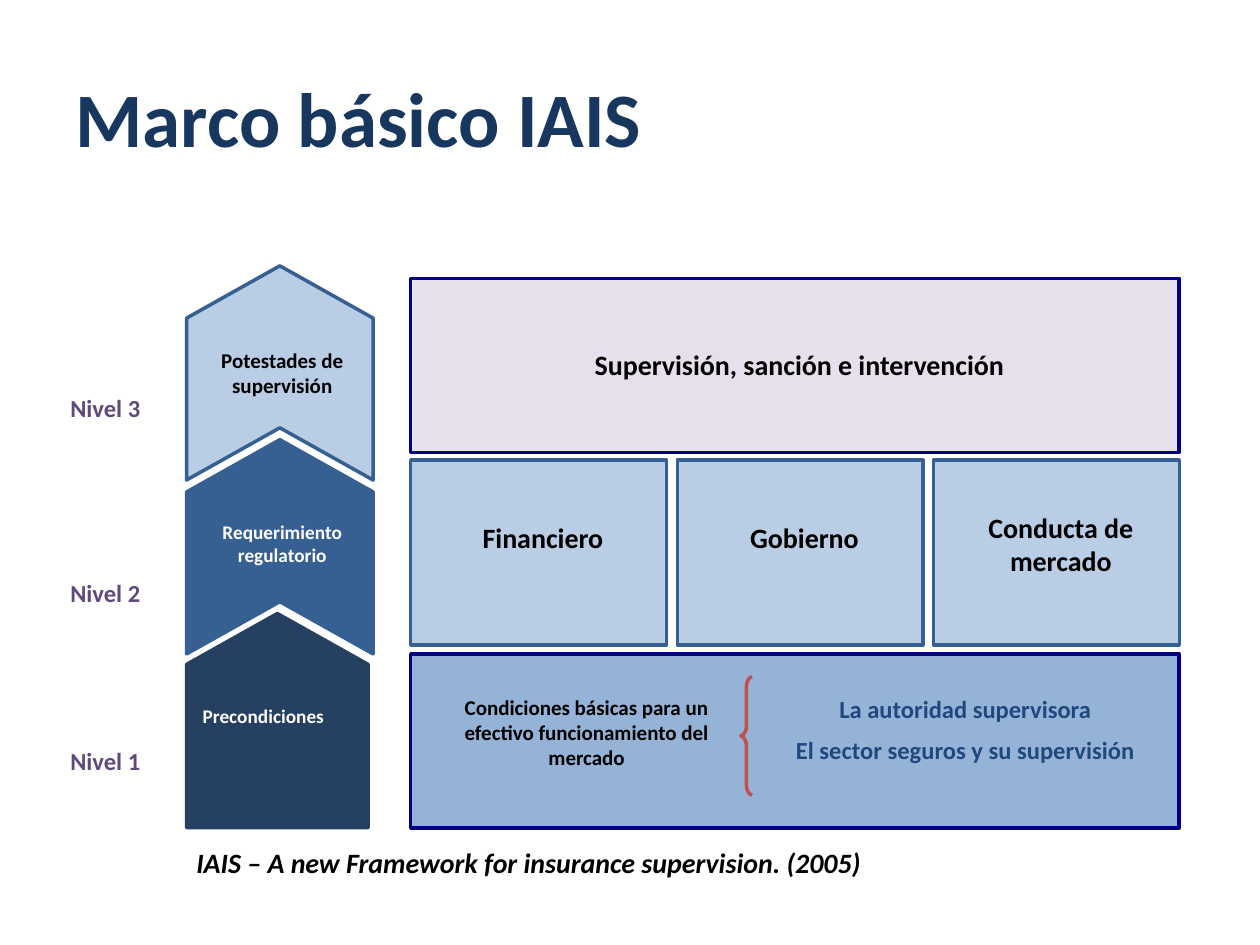
from pptx import Presentation
from pptx.dml.color import RGBColor
from pptx.enum.shapes import MSO_SHAPE
from pptx.enum.text import MSO_ANCHOR, PP_ALIGN
from pptx.util import Pt

BLACK = RGBColor(0x00, 0x00, 0x00)
WHITE = RGBColor(0xFF, 0xFF, 0xFF)
TITLE = RGBColor(0x17, 0x37, 0x5E)
DEEP = RGBColor(0x25, 0x40, 0x61)
BLUE = RGBColor(0x37, 0x60, 0x92)
PALE = RGBColor(0xB9, 0xCD, 0xE5)
SKY = RGBColor(0x95, 0xB3, 0xD7)
LILAC = RGBColor(0xE6, 0xE0, 0xEC)
NAVY = RGBColor(0x00, 0x00, 0x80)
RED = RGBColor(0xC0, 0x50, 0x4D)
INK = RGBColor(0x1F, 0x49, 0x7D)
PURPLE = RGBColor(0x60, 0x4A, 0x7B)
FONT = "Calibri"


def style(run, size, color, italic=False):
    font = run.font
    font.name, font.size = FONT, Pt(size)
    font.bold, font.italic = True, italic
    font.color.rgb = color


def shape(slide, kind, box, fill, line):
    item = slide.shapes.add_shape(kind, *map(Pt, box))
    item.shadow.inherit = False
    if fill is None:
        item.fill.background()
    else:
        item.fill.solid()
        item.fill.fore_color.rgb = fill
    item.line.color.rgb = line
    item.line.width = Pt(2)
    return item


def label(slide, box, lines, size, color, align=PP_ALIGN.CENTER, italic=False):
    frame = slide.shapes.add_textbox(*map(Pt, box)).text_frame
    frame.word_wrap = True
    for i, line in enumerate(lines):
        para = frame.paragraphs[0] if i == 0 else frame.add_paragraph()
        para.alignment = align
        if i:
            para.space_before = Pt(6.3)
        run = para.add_run()
        run.text = line
        style(run, size, color, italic)


def heading(slide, box, text):
    title = slide.shapes.title
    title.left, title.top, title.width, title.height = map(Pt, box)
    frame = title.text_frame
    frame.vertical_anchor = MSO_ANCHOR.MIDDLE
    para = frame.paragraphs[0]
    para.alignment = PP_ALIGN.LEFT
    run = para.add_run()
    run.text = text
    style(run, 44, TITLE)


def tower(slide, box):
    """Stack of upward arrows, drawn from the lowest to the highest."""
    left, top, wide, high = box
    step = 122.4
    pitch = (high - step) / 2
    steps = [
        (2, MSO_SHAPE.PENTAGON, wide - 2.8, DEEP, DEEP),
        (1, MSO_SHAPE.CHEVRON, wide, BLUE, BLUE),
        (0, MSO_SHAPE.CHEVRON, wide, PALE, BLUE),
    ]
    for row, kind, width, fill, line in steps:
        # Turned a quarter, so its length runs up the tower
        x = left + (width - step) / 2
        y = top + row * pitch + (step - width) / 2
        arrow = shape(slide, kind, (x, y, step, width), fill, line)
        arrow.rotation = 270
        arrow.adjustments[0] = 0.28

    names = [
        (5.7, 43.2, "Potestades de supervisión", 12, BLACK, PP_ALIGN.CENTER),
        (5.7, 141.8, "Requerimiento regulatorio", 11, WHITE, PP_ALIGN.CENTER),
        (2.1, 246.9, "Precondiciones", 11, WHITE, PP_ALIGN.LEFT),
    ]
    for x, y, text, size, color, align in names:
        label(slide, (left + x, top + y, 98, 36), [text], size, color, align)


def levels(slide, box):
    left, top, wide, high = box
    for level, y in ((3, 0), (2, 105.9), (1, 201.6)):
        label(slide, (left, top + y, wide, 23), [f"Nivel {level}"], 14, PURPLE,
              PP_ALIGN.LEFT)


def powers(slide, box):
    left, top, wide, high = box
    shape(slide, MSO_SHAPE.RECTANGLE, box, LILAC, NAVY)
    label(slide, (left + 85, top + 36, 274.5, 43),
          ["Supervisión, sanción e intervención"], 16, BLACK)


def rules(slide, box):
    left, top, wide, high = box
    gap = 6.1
    cells = [("Financiero", 146.2, 31), ("Gobierno", 140.4, 31),
             ("Conducta de mercado", 140.4, 25.2)]
    for text, width, y in cells:
        shape(slide, MSO_SHAPE.RECTANGLE, (left, top, width, high), PALE, BLUE)
        label(slide, (left + 5.7, top + y, width - 6.4, 43), [text], 16, BLACK)
        left += width + gap


def basis(slide, box):
    left, top, wide, high = box
    shape(slide, MSO_SHAPE.RECTANGLE, box, SKY, NAVY)
    label(slide, (left + 18, top + 19.4, 165, 62),
          ["Condiciones básicas para un efectivo funcionamiento del mercado"],
          12, BLACK)
    brace = shape(slide, MSO_SHAPE.LEFT_BRACE,
                  (left + 188.6, top + 13, 6.5, 67.7), None, RED)
    brace.adjustments[0] = 0.9
    label(slide, (left + 201, top + 19.4, 232, 66),
          ["La autoridad supervisora", "El sector seguros y su supervisión"],
          14, INK)


def main():
    deck = Presentation()
    deck.slide_width, deck.slide_height = Pt(720), Pt(540)
    slide = deck.slides.add_slide(deck.slide_layouts[5])
    heading(slide, (36, 21.6, 648, 90), "Marco básico IAIS")
    tower(slide, (106.6, 151.9, 106.6, 321.1))
    left, wide = 234.7, 439.2
    powers(slide, (left, 159.1, wide, 99.4))
    rules(slide, (left, 262.8, wide, 105.8))
    basis(slide, (left, 373.7, wide, 99.4))
    levels(slide, (33.1, 221, 67, 224.6))
    label(slide, (105.1, 479.5, 518.4, 26.6),
          ["IAIS – A new Framework for insurance supervision. (2005)"],
          16, BLACK, PP_ALIGN.LEFT, True)
    deck.save("out.pptx")


if __name__ == "__main__":
    main()
